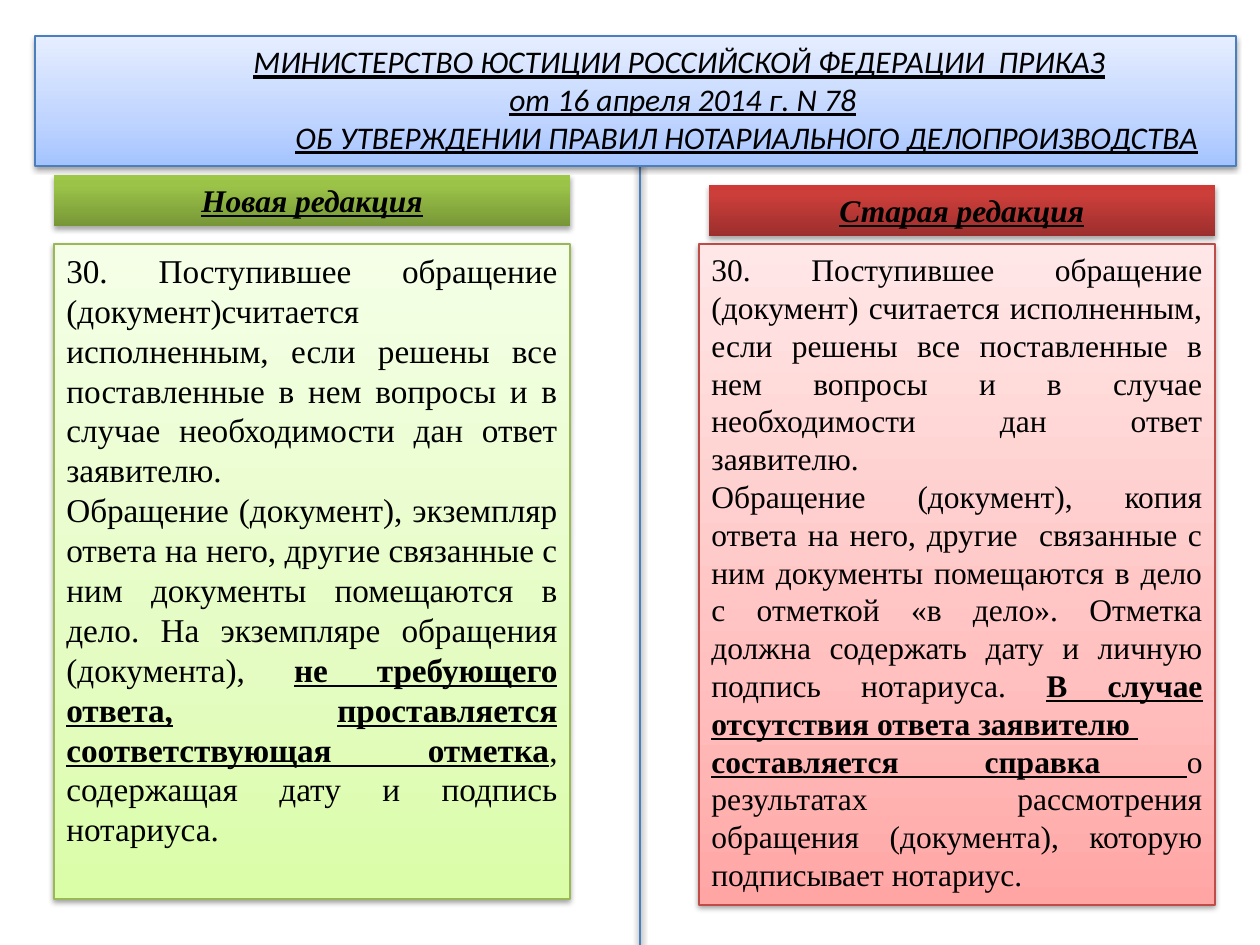
from dataclasses import dataclass
from pptx import Presentation
from pptx.dml.color import RGBColor as RGB
from pptx.enum.shapes import MSO_CONNECTOR as Link, MSO_SHAPE as Kind
from pptx.enum.text import MSO_ANCHOR as Anchor, PP_ALIGN as Align
from pptx.oxml import parse_xml as to_xml
from pptx.oxml.ns import nsdecls
from pptx.util import Pt

SCALE = 914400 // 126


@dataclass(frozen=True)
class Theme:
    ink: str = "000000"
    blue: str = "4B7EBC"
    green: str = "98B955"
    red: str = "BF4C48"
    sky: tuple = ((0, "A4C4FF"), (35, "BFD4FF"), (100, "E6EEFF"))
    lime: tuple = ((0, "DAFDA7"), (35, "E4FCC2"), (100, "F5FFE7"))
    rose: tuple = ((0, "FFA6A5"), (35, "FFC0BF"), (100, "FFE7E7"))
    leaf: tuple = ((0, "779737"), (80, "9BC348"), (100, "9DC746"))
    brick: tuple = ((0, "9C2F2D"), (80, "CB3E3A"), (100, "CE3B37"))
    sans: str = "Calibri"
    serif: str = "Times New Roman"
    size: int = 18
    large: int = 19
    rule: float = 0.75


class Deck:
    def __init__(self, theme):
        self.theme = theme
        self.file = Presentation()
        self.file.slide_width = 1260 * SCALE
        self.file.slide_height = 945 * SCALE
        self.slide = self.file.slides.add_slide(self.file.slide_layouts[6])

    def shade(self, item, blur, dist, alpha):
        item._element.spPr.append(to_xml(
            f'<a:effectLst {nsdecls("a")}><a:outerShdw blurRad="{Pt(blur)}" '
            f'dist="{Pt(dist)}" dir="5400000" rotWithShape="0">'
            f'<a:srgbClr val="{self.theme.ink}"><a:alpha val="{alpha * 1000}"/>'
            '</a:srgbClr></a:outerShdw></a:effectLst>'))

    def edge(self, item, color):
        item.line.color.rgb = RGB.from_string(color)
        item.line.width = Pt(self.theme.rule)

    def line(self, x, top, end):
        item = self.slide.shapes.add_connector(
            Link.STRAIGHT, *(n * SCALE for n in (x, top, x, end)))
        self.edge(item, self.theme.blue)
        self.shade(item, 4, 4, 100)

    def box(self, place, stops, color=None):
        item = self.slide.shapes.add_shape(
            Kind.RECTANGLE, *(n * SCALE for n in place))
        marks = "".join(
            f'<a:gs pos="{pos * 1000}"><a:srgbClr val="{tone}"/></a:gs>'
            for pos, tone in stops)
        item._element.spPr.append(to_xml(
            f'<a:gradFill {nsdecls("a")} rotWithShape="1"><a:gsLst>{marks}'
            '</a:gsLst><a:lin ang="16200000" scaled="0"/></a:gradFill>'))
        if color:
            self.edge(item, color)
            self.shade(item, 3.1, 1.6, 38)
        else:
            item.line.fill.background()
            self.shade(item, 3.1, 1.8, 35)
        frame = item.text_frame
        frame.word_wrap = True
        frame.vertical_anchor = Anchor.TOP
        return frame

    def para(self, frame, align, first):
        part = frame.paragraphs[0] if first else frame.add_paragraph()
        part.alignment = align
        return part

    def run(self, part, text, face, size, bold=False, slant=False, under=False):
        run = part.add_run()
        run.text = text
        font = run.font
        font.name, font.size = face, Pt(size)
        font.bold, font.italic, font.underline = bold, slant, under
        font.color.rgb = RGB.from_string(self.theme.ink)

    def body(self, place, stops, color, size, parts):
        frame = self.box(place, stops, color)
        for i, runs in enumerate(parts):
            part = self.para(frame, Align.JUSTIFY, i == 0)
            for text, bold, under in runs:
                self.run(part, text, self.theme.serif, size, bold, False, under)

    def label(self, place, stops, text):
        part = self.para(self.box(place, stops), Align.CENTER, True)
        self.run(part, text, self.theme.serif, self.theme.size, True, True, True)

    def title(self, place, rows):
        frame = self.box(place, self.theme.sky, self.theme.blue)
        for i, (indent, text) in enumerate(rows):
            part = self.para(frame, Align.LEFT, i == 0)
            part.line_spacing = Pt(21.6)
            part._p.get_or_add_pPr().set("marL", str(indent * SCALE))
            self.run(part, text, self.theme.sans, self.theme.size,
                     slant=True, under=True)


NEW = [
    [("30. Поступившее обращение (документ)считается исполненным, если решены "
      "все поставленные в нем вопросы и в случае необходимости дан ответ "
      "заявителю.", False, False)],
    [("Обращение (документ), экземпляр ответа на него, другие связанные с ним "
      "документы помещаются в дело. На экземпляре обращения (документа), ",
      False, False),
     ("не требующего ответа,", True, True),
     (" ", True, False),
     ("проставляется соответствующая отметка", True, True),
     (", содержащая дату и подпись нотариуса.", False, False)],
]
OLD = [
    [("30. Поступившее обращение (документ) считается исполненным, если решены "
      "все поставленные в нем вопросы и в случае необходимости дан ответ "
      "заявителю.", False, False)],
    [("Обращение (документ), копия ответа на него, другие  связанные с ним "
      "документы помещаются в дело с отметкой «в дело». Отметка должна "
      "содержать дату и личную подпись нотариуса. ", False, False),
     ("В случае отсутствия ответа заявителю ", True, True)],
    [("составляется справка ", True, True),
     ("о результатах рассмотрения обращения (документа), которую подписывает "
      "нотариус.", False, False)],
]
HEAD = [
    (206, "МИНИСТЕРСТВО ЮСТИЦИИ РОССИЙСКОЙ ФЕДЕРАЦИИ  ПРИКАЗ"),
    (462, "от 16 апреля 2014 г. N 78"),
    (248, "ОБ УТВЕРЖДЕНИИ ПРАВИЛ НОТАРИАЛЬНОГО ДЕЛОПРОИЗВОДСТВА"),
]


def main():
    theme = Theme()
    deck = Deck(theme)
    deck.body((54, 244, 516, 655), theme.lime, theme.green, theme.large, NEW)
    deck.body((699, 244, 516, 661), theme.rose, theme.red, theme.size, OLD)
    deck.label((54, 175, 516, 51), theme.leaf, "Новая редакция")
    deck.label((709, 185, 506, 51), theme.brick, "Старая редакция")
    deck.line(640, 106, 945)
    deck.title((35, 36, 1201, 130), HEAD)
    deck.file.save("out.pptx")


if __name__ == "__main__":
    main()
